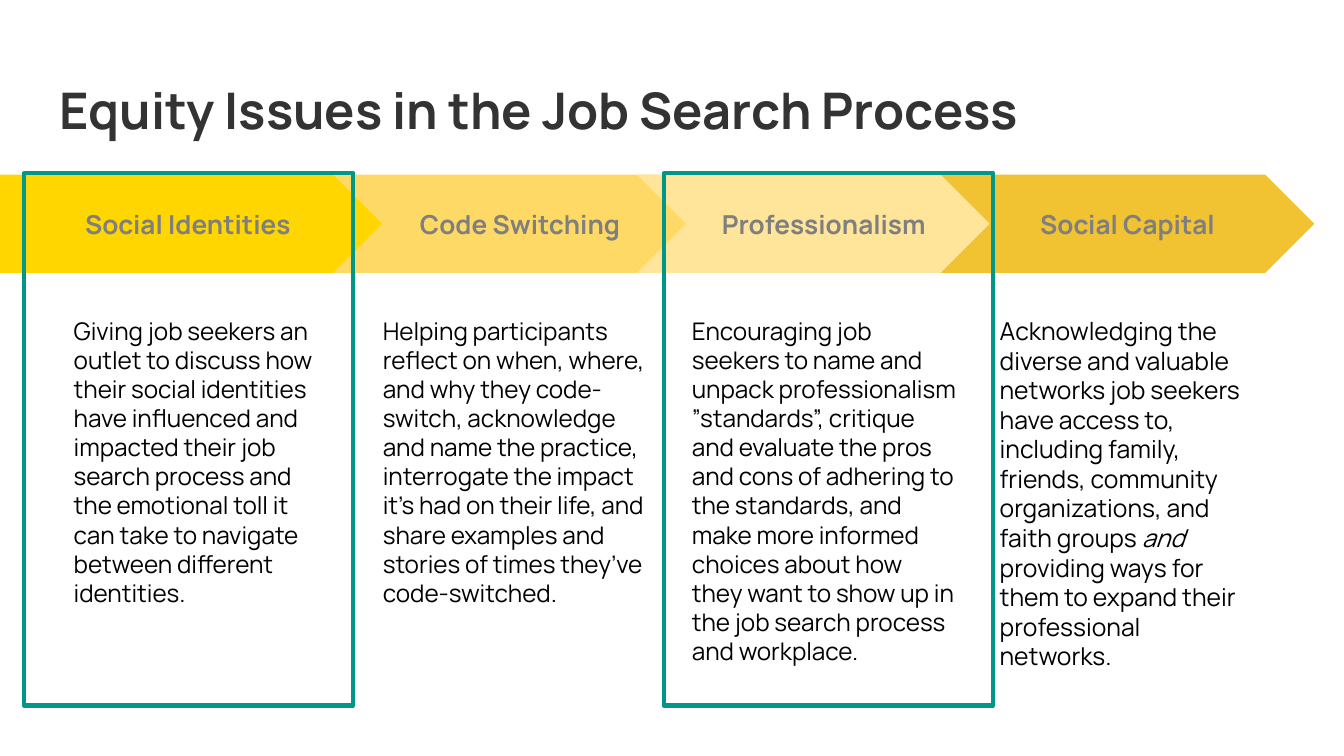
from pptx import Presentation
from pptx.dml.color import RGBColor
from pptx.enum.shapes import MSO_SHAPE
from pptx.enum.text import MSO_ANCHOR, PP_ALIGN
from pptx.util import Inches, Pt

FONT = "Manrope"
COLORS = {
    "title": "333333",
    "heading": "7F7F7F",
    "body": "000000",
    "highlight": "009688",
    "identities": "FFD600",
    "switching": "FFD966",
    "professionalism": "FFE599",
    "capital": "F1C232",
}
STEP_TOP, STEP_HEIGHT = 1.3, 0.73
STEP_WIDTH, STEP_PITCH, FIRST_CHEVRON_LEFT = 2.78, 2.26, 2.48
DETAIL_TOP, DETAIL_HEIGHT = 2.25, 2.86

# heading, colour, detail left, detail width, text size, detail as (text, italic) parts
STEPS = [
    ("Social Identities", "identities", 0.45, 2.08, 13, [
        ("Giving job seekers an outlet to discuss how their social identities have "
         "influenced and impacted their job search process and the emotional toll it "
         "can take to navigate between different identities.", False)]),
    ("Code Switching", "switching", 2.75, 2.19, 13, [
        ("Helping participants reflect on when, where, and why they code-switch, "
         "acknowledge and name the practice, interrogate the impact it’s had on their "
         "life, and share examples and stories of times they’ve code-switched.", False)]),
    ("Professionalism", "professionalism", 5.05, 2.17, 13, [
        ("Encouraging job seekers to name and unpack professionalism ”standards”, "
         "critique and evaluate the pros and cons of adhering to the standards, and "
         "make more informed choices about how they want to show up in the job search "
         "process and workplace.", False)]),
    ("Social Capital", "capital", 7.34, 2.08, 13.2, [
        ("Acknowledging the diverse and valuable networks job seekers have access to, "
         "including family, friends, community organizations, and faith groups ", False),
        ("and", True),
        (" providing ways for them to expand their professional networks.", False)]),
]


def rgb(name):
    return RGBColor.from_string(COLORS[name])


def set_frame(frame, anchor):
    frame.word_wrap = True
    frame.vertical_anchor = anchor
    frame.margin_left = frame.margin_right = Inches(0.1)
    frame.margin_top = frame.margin_bottom = Inches(0.1)


def format_run(run, size, color, bold=False, italic=False):
    run.font.name = FONT
    run.font.size = Pt(size)
    run.font.bold = bold
    run.font.italic = italic
    run.font.color.rgb = rgb(color)


def add_title(slide, text):
    title = slide.shapes.title
    title.left, title.top = Inches(0.34), Inches(0.49)
    title.width, title.height = Inches(9.32), Inches(0.68)
    set_frame(title.text_frame, MSO_ANCHOR.TOP)
    title.text_frame.text = text
    paragraph = title.text_frame.paragraphs[0]
    paragraph.alignment = PP_ALIGN.LEFT
    format_run(paragraph.runs[0], 27, "title", bold=True)


def add_step(slide, index, heading, color):
    """Add one arrow of the band; the first starts flush with the slide edge."""
    if index == 0:
        kind, left, width = MSO_SHAPE.PENTAGON, 0, 2.98
    else:
        kind, width = MSO_SHAPE.CHEVRON, STEP_WIDTH
        left = FIRST_CHEVRON_LEFT + (index - 1) * STEP_PITCH
    step = slide.shapes.add_shape(
        kind, Inches(left), Inches(STEP_TOP), Inches(width), Inches(STEP_HEIGHT))
    step.adjustments[0] = 0.5
    step.shadow.inherit = False
    step.fill.solid()
    step.fill.fore_color.rgb = rgb(color)
    step.line.fill.background()
    set_frame(step.text_frame, MSO_ANCHOR.MIDDLE)
    step.text_frame.text = heading
    paragraph = step.text_frame.paragraphs[0]
    paragraph.alignment = PP_ALIGN.CENTER
    format_run(paragraph.runs[0], 14, "heading", bold=True)


def add_detail(slide, left, width, size, parts):
    detail = slide.shapes.add_textbox(
        Inches(left), Inches(DETAIL_TOP), Inches(width), Inches(DETAIL_HEIGHT))
    set_frame(detail.text_frame, MSO_ANCHOR.TOP)
    paragraph = detail.text_frame.paragraphs[0]
    for text, italic in parts:
        run = paragraph.add_run()
        run.text = text
        format_run(run, size, "body", italic=italic)


def add_highlight(slide, left):
    highlight = slide.shapes.add_shape(
        MSO_SHAPE.RECTANGLE, Inches(left), Inches(1.29), Inches(2.45), Inches(3.96))
    highlight.shadow.inherit = False
    highlight.fill.background()
    highlight.line.color.rgb = rgb("highlight")
    highlight.line.width = Pt(2.25)


def main():
    presentation = Presentation()
    presentation.slide_width = Inches(10)
    presentation.slide_height = presentation.slide_width * 9 // 16
    slide = presentation.slides.add_slide(presentation.slide_layouts[5])

    add_title(slide, "Equity Issues in the Job Search Process")
    for index, (heading, color, left, width, size, parts) in enumerate(STEPS):
        add_step(slide, index, heading, color)
        add_detail(slide, left, width, size, parts)
    for left in (4.94, 0.18):
        add_highlight(slide, left)

    presentation.save("out.pptx")


if __name__ == "__main__":
    main()
